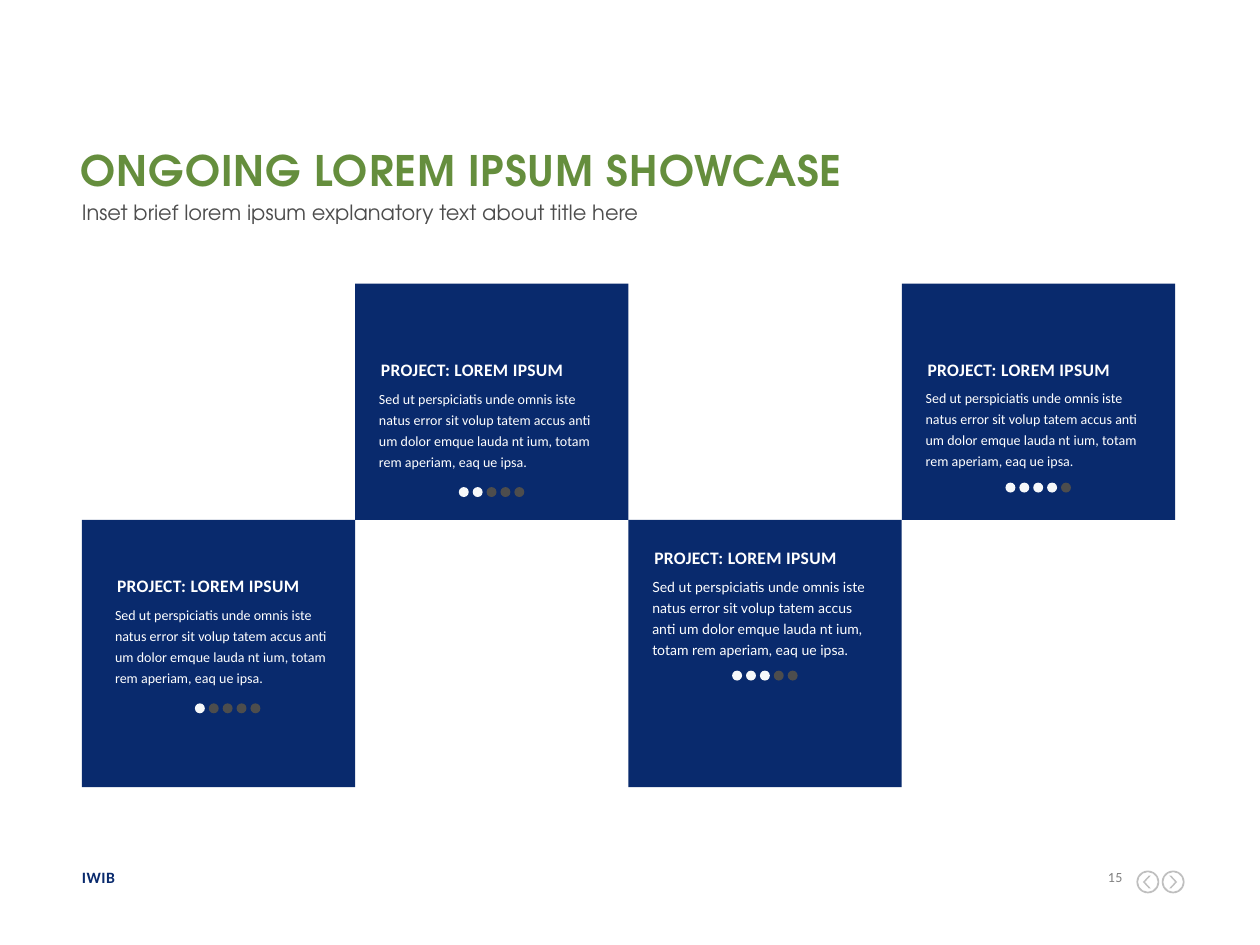
import pptx
import pptx.util
import pptx.dml.color
import pptx.enum.shapes
import pptx.enum.text

Cm = pptx.util.Cm
Pt = pptx.util.Pt
Kind = pptx.enum.shapes.MSO_SHAPE
Align = pptx.enum.text.PP_ALIGN


class Theme:
    navy = "092A6D"
    green = "658E3D"
    white = "FFFFFF"
    pale = "F6F8FA"
    dark = "4D4D4D"
    grey = "808080"
    silver = "BFBFBF"
    sans = "Calibri"
    display = "TeX Gyre Adventor"
    title = 24
    lead = 12
    head = 10
    foot = 9
    small = 8


def write(shapes, text, box, size, color, font=Theme.sans, bold=False,
          track=0, align=Align.LEFT, line=None):
    area = shapes.add_textbox(*[Cm(n) for n in box])
    frame = area.text_frame
    frame.word_wrap = True
    frame.margin_left = frame.margin_right = 0
    frame.margin_top = frame.margin_bottom = 0
    frame.text = text
    para = frame.paragraphs[0]
    para.alignment = align
    if line:
        para.line_spacing = Pt(line)
    run = para.runs[0]
    run.font.name = font
    run.font.size = Pt(size)
    run.font.bold = bold
    run.font.color.rgb = pptx.dml.color.RGBColor.from_string(color)
    if track:
        run.font._element.set("spc", str(track))


def draw(shapes, kind, box, color):
    shape = shapes.add_shape(kind, *[Cm(n) for n in box])
    shape.shadow.inherit = False
    shape.fill.solid()
    shape.fill.fore_color.rgb = pptx.dml.color.RGBColor.from_string(color)
    shape.line.fill.background()
    return shape


deck = pptx.Presentation()
deck.slide_width = Cm(25.4)
deck.slide_height = Cm(19.05)
slide = deck.slides.add_slide(deck.slide_layouts[6])
shapes = slide.shapes

left = 1.65
write(shapes, "IWIB", (left, 17.5, 4.95, 0.38), Theme.foot, Theme.navy,
      bold=True, track=30)
write(shapes, "15", (22.05, 17.5, 0.58, 0.33), Theme.small, Theme.grey,
      track=30, align=Align.RIGHT)

for x, tip, turn in ((22.91, 23.04, 180), (23.42, 23.57, 0)):
    ring = draw(shapes, Kind.DONUT, (x, 17.55, 0.46, 0.46), Theme.silver)
    ring.adjustments[0] = 0.07
    arrow = draw(shapes, Kind.CHEVRON, (tip, 17.65, 0.16, 0.26), Theme.silver)
    arrow.adjustments[0] = 0.75
    arrow.rotation = turn

write(shapes, "ONGOING LOREM IPSUM SHOWCASE", (1.63, 2.92, 22.1, 1.07),
      Theme.title, Theme.green, Theme.display, bold=True, track=50)
write(shapes, "Inset brief lorem ipsum explanatory text about title here",
      (left, 4.11, 22.1, 0.38), Theme.lead, Theme.dark, Theme.display, line=12)

wide = 5.51
rows = {"high": (5.72, 4.76), "low": (10.48, 5.39)}
body = ("Sed ut perspiciatis unde omnis iste natus error sit volup tatem "
        "accus anti um dolor emque lauda nt ium, totam rem aperiam, "
        "eaq ue ipsa.")
cards = (
    ("low", 0.67, 11.59, 0.56, 2.59, 1, Theme.sans),
    ("high", 0.48, 7.23, 0.56, 2.59, 2, Theme.sans),
    ("low", 0.48, 11.02, 0.55, 2.5, 3, "Lato"),
    ("high", 0.48, 7.23, 0.54, 2.5, 4, Theme.sans),
)
for col, (row, inset, top, drop, fall, score, font) in enumerate(cards):
    edge = left + col * wide
    y, tall = rows[row]
    draw(shapes, Kind.RECTANGLE, (edge, y, wide, tall), Theme.navy)
    x = edge + inset
    group = shapes.add_group_shape().shapes
    write(group, body, (x, top + drop, 4.52, 1.7), Theme.small, Theme.white,
          font, line=12)
    write(group, "PROJECT: LOREM IPSUM", (x + 0.04, top, 4.47, 0.43),
          Theme.head, Theme.white, bold=True, track=20, align=Align.JUSTIFY)
    for dot in range(5):
        draw(group, Kind.OVAL, (x + 1.61 + dot * 0.28, top + fall, 0.2, 0.2),
             Theme.pale if dot < score else Theme.dark)

deck.save("out.pptx")
